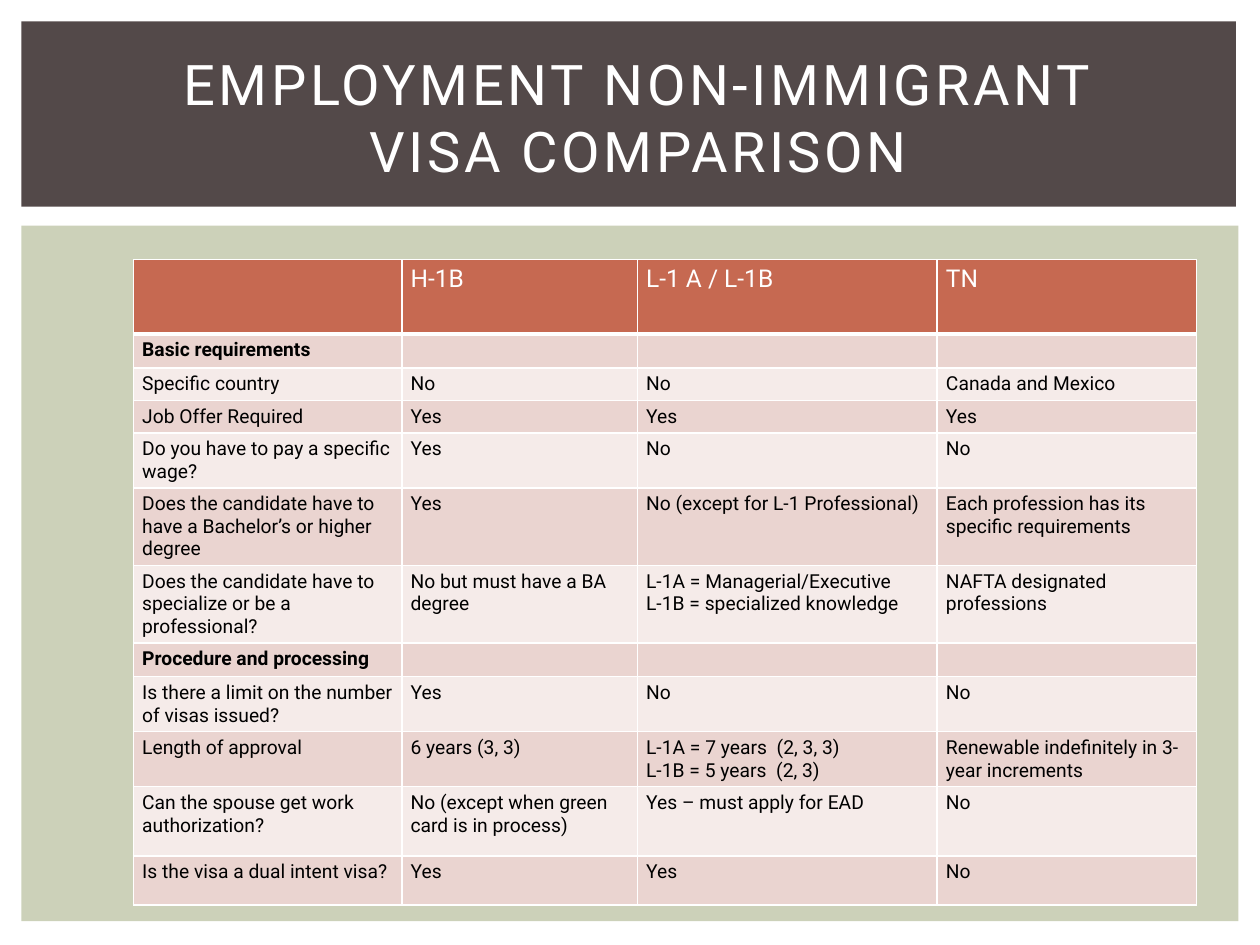
from lxml import etree
from pptx import Presentation, util as u
from pptx.dml.color import RGBColor
from pptx.enum import shapes, text
from pptx.oxml import ns

SLIDE_WIDTH, SLIDE_HEIGHT = 10, 7.5
FONT = "Roboto"
WHITE, BLACK = "FFFFFF", "000000"
BANNER, PANEL = "534949", "CCD1B9"
HEADER, BANDS = "C66951", ("EAD4D0", "F5EBE9")

COLUMN_WIDTHS = (2.13, 1.87, 2.38, 2.06)
ROW_HEIGHTS = (0.59, 0.23, 0.23, 0.23, 0.39, 0.55, 0.55, 0.23, 0.39, 0.39, 0.55, 0.39)
SECTIONS = ("Basic requirements", "Procedure and processing")
VISA_ROWS = (
    ("", "H-1B", "L-1 A / L-1B", "TN"),
    (SECTIONS[0], "", "", ""),
    ("Specific country", "No", "No", "Canada and Mexico"),
    ("Job Offer Required", "Yes", "Yes", "Yes"),
    ("Do you have to pay a specific wage?", "Yes", "No", "No"),
    ("Does the candidate have to have a Bachelor’s or higher degree", "Yes",
     "No (except for L-1 Professional)", "Each profession has its specific requirements"),
    ("Does the candidate have to specialize or be a professional?",
     "No but must have a BA degree",
     "L-1A = Managerial/Executive\nL-1B = specialized knowledge",
     "NAFTA designated professions"),
    (SECTIONS[1], "", "", ""),
    ("Is there a limit on the number of visas issued?", "Yes", "No", "No"),
    ("Length of approval", "6 years (3, 3)",
     "L-1A = 7 years  (2, 3, 3)\nL-1B = 5 years  (2, 3)",
     "Renewable indefinitely in 3-year increments"),
    ("Can the spouse get work authorization?", "No (except when green card is in process)",
     "Yes – must apply for EAD", "No"),
    ("Is the visa a dual intent visa?", "Yes", "Yes", "No"),
)


def paint(target, color):
    target.solid()
    target.fore_color.rgb = RGBColor.from_string(color)


def add_span(para, words, size, color, bold=False):
    span = para.add_run()
    span.text = words
    span.font.name = FONT
    span.font.size = u.Pt(size)
    span.font.bold = bold
    paint(span.font.fill, color)
    return span


def add_block(page, box, color):
    block = page.shapes.add_shape(shapes.MSO_SHAPE.RECTANGLE, *map(u.Inches, box))
    block.shadow.inherit = False
    paint(block.fill, color)
    block.line.fill.background()


def add_banner(page, box):
    left, top, width, height = box
    add_block(page, box, BANNER)
    title_box = (left + width * 0.088, top + height * 0.293, width * 0.84, height * 0.442)
    title = page.shapes.add_textbox(*map(u.Inches, title_box))
    frame = title.text_frame
    frame.word_wrap = True
    frame.vertical_anchor = text.MSO_ANCHOR.MIDDLE
    para = frame.paragraphs[0]
    para.alignment = text.PP_ALIGN.CENTER
    span = add_span(para, "EMPLOYMENT NON-IMMIGRANT VISA COMPARISON", 32, WHITE)
    span.font._element.set("spc", "200")


def set_borders(cell, bottom_width):
    properties = cell._tc.get_or_add_tcPr()
    for position, side in enumerate("LRTB"):
        width = bottom_width if side == "B" else 1
        line = etree.Element(ns.qn(f"a:ln{side}"), w=str(u.Pt(width)))
        fill = etree.SubElement(line, ns.qn("a:solidFill"))
        etree.SubElement(fill, ns.qn("a:srgbClr"), val=WHITE)
        properties.insert(position, line)


def fill_cell(cell, words, size, color, fill, bold, bottom_width):
    cell.margin_left = cell.margin_right = u.Inches(0.07)
    cell.margin_top = cell.margin_bottom = u.Inches(0.04)
    paint(cell.fill, fill)
    set_borders(cell, bottom_width)
    frame = cell.text_frame
    for index, line in enumerate(words.split("\n")):
        para = frame.add_paragraph() if index else frame.paragraphs[0]
        if line:
            add_span(para, line, size, color, bold)
        else:
            etree.SubElement(para._p, ns.qn("a:endParaRPr"), sz=str(size * 100))


def add_visa_table(page, box):
    table = page.shapes.add_table(
        len(VISA_ROWS), len(COLUMN_WIDTHS), *map(u.Inches, box)).table
    for column, width in zip(table.columns, COLUMN_WIDTHS):
        column.width = u.Inches(width)
    for row_index, (row, height, entries) in enumerate(
            zip(table.rows, ROW_HEIGHTS, VISA_ROWS)):
        row.height = u.Inches(height)
        is_header = row_index == 0
        style = (14, WHITE, HEADER) if is_header else (11, BLACK, BANDS[(row_index - 1) % 2])
        for cell, words in zip(row.cells, entries):
            fill_cell(cell, words, *style, bold=words in SECTIONS,
                      bottom_width=3 if is_header else 1)


def add_comparison(page, box):
    left, top, width, height = box
    add_block(page, box, PANEL)
    add_visa_table(page, (left + width * 0.092, top + height * 0.049,
                          sum(COLUMN_WIDTHS), sum(ROW_HEIGHTS)))


def main():
    deck = Presentation()
    deck.slide_width = u.Inches(SLIDE_WIDTH)
    deck.slide_height = u.Inches(SLIDE_HEIGHT)
    page = deck.slides.add_slide(deck.slide_layouts[6])
    margin = 0.17
    add_comparison(page, (margin, 1.79, SLIDE_WIDTH - 2 * margin, 5.52))
    add_banner(page, (margin, margin, 9.64, 1.47))
    deck.save("out.pptx")


if __name__ == "__main__":
    main()
